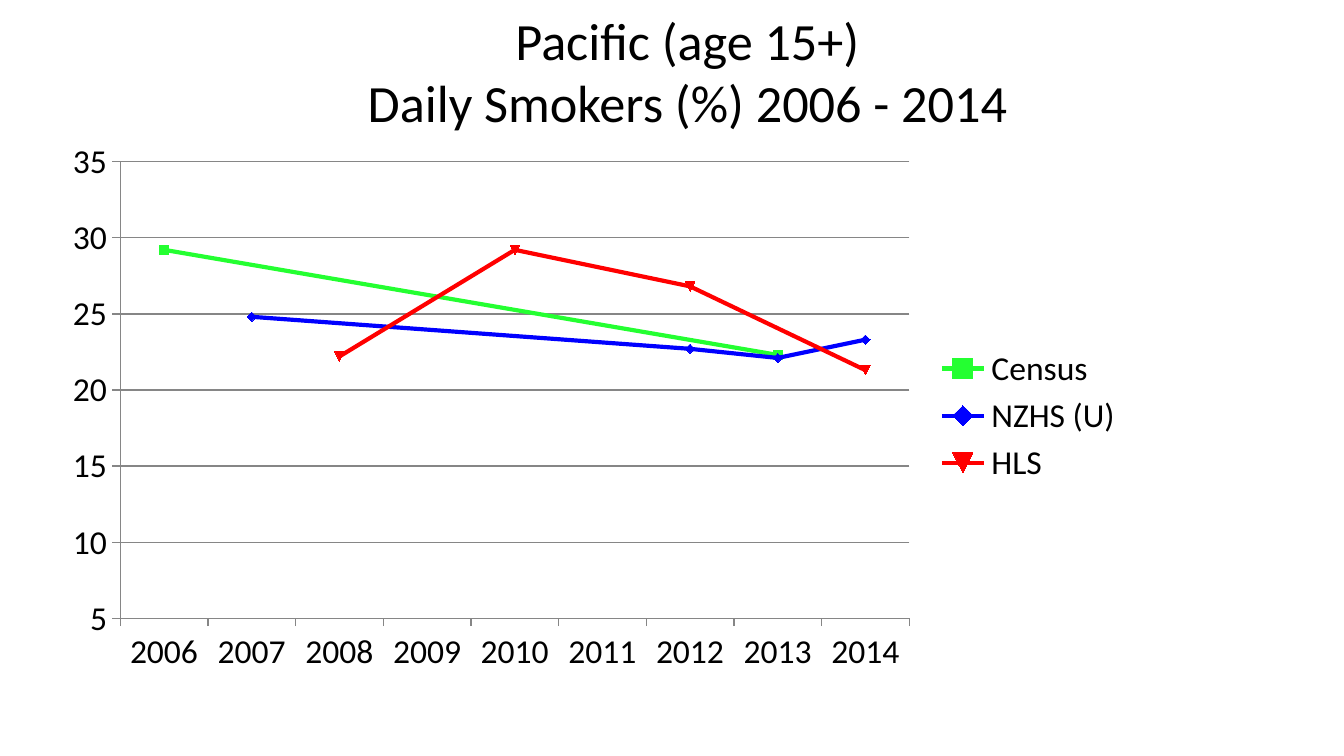
from lxml import etree
from pptx import Presentation
from pptx.chart.data import CategoryChartData
from pptx.dml.color import RGBColor
from pptx.enum.chart import XL_CHART_TYPE, XL_LEGEND_POSITION, XL_MARKER_STYLE, XL_TICK_MARK
from pptx.enum.text import MSO_ANCHOR, PP_ALIGN
from pptx.oxml.ns import qn
from pptx.util import Cm, Pt

LINE = XL_CHART_TYPE.LINE_MARKERS
RIGHT = XL_LEGEND_POSITION.RIGHT
AUTO = XL_MARKER_STYLE.AUTOMATIC
OUT = XL_TICK_MARK.OUTSIDE
MIDDLE = MSO_ANCHOR.MIDDLE
CENTER = PP_ALIGN.CENTER

FONT = "Calibri"
COLORS = {
    "text": "000000",
    "axis": "868686",
    "Census": "24FF31",
    "NZHS (U)": "0000FF",
    "HLS": "FF0000",
}
YEARS = range(2006, 2015)
RATES = {
    "Census": {2006: 29.2, 2013: 22.3},
    "NZHS (U)": {2007: 24.8, 2012: 22.7, 2013: 22.1, 2014: 23.3},
    "HLS": {2008: 22.2, 2010: 29.2, 2012: 26.8, 2014: 21.3},
}
PLOT = {"x": 0.058, "y": 0.03, "w": 0.731, "h": 0.845}


def color(name):
    return RGBColor.from_string(COLORS[name])


def set_font(font, size):
    font.name = FONT
    font.size = Pt(size)
    font.color.rgb = color("text")


def set_line(line, name, width):
    line.color.rgb = color(name)
    line.width = Pt(width)


def add_title(slide, text):
    title = slide.shapes.title
    title.left, title.top = Cm(1.09), Cm(0)
    title.width, title.height = Cm(23.8), Cm(2.67)
    frame = title.text_frame
    frame.text = text
    frame.vertical_anchor = MIDDLE
    for para in frame.paragraphs:
        para.alignment = CENTER
        for run in para.runs:
            set_font(run.font, 28)


def place_plot(chart):
    """Fix the inner plot area as fractions of the chart."""
    area = chart.plots[0]._element.getparent()
    for old in area.findall(qn("c:layout")):
        area.remove(old)
    layout = etree.Element(qn("c:layout"))
    area.insert(0, layout)
    manual = etree.SubElement(layout, qn("c:manualLayout"))
    parts = {"layoutTarget": "inner", "xMode": "edge", "yMode": "edge", **PLOT}
    for tag, val in parts.items():
        etree.SubElement(manual, qn("c:" + tag)).set("val", str(val))


def style_axes(chart):
    for axis in (chart.category_axis, chart.value_axis):
        axis.major_tick_mark = OUT
        set_line(axis.format.line, "axis", 0.75)
        set_font(axis.tick_labels.font, 18)
    axis = chart.value_axis
    axis.minimum_scale, axis.maximum_scale = 5, 35
    axis.major_unit = 5
    axis.has_major_gridlines = True
    set_line(axis.major_gridlines.format.line, "axis", 0.75)


def style_series(series):
    set_line(series.format.line, series.name, 2.25)
    series.smooth = False
    mark = series.marker
    mark.style, mark.size = AUTO, 5
    mark.format.fill.solid()
    mark.format.fill.fore_color.rgb = color(series.name)
    set_line(mark.format.line, series.name, 0.75)


def add_chart(slide):
    data = CategoryChartData()
    data.categories = [str(year) for year in YEARS]
    for name, rates in RATES.items():
        data.add_series(name, [rates.get(year) for year in YEARS])
    chart = slide.shapes.add_chart(
        LINE, Cm(1.09), Cm(2.67), Cm(20.4), Cm(10.29), data).chart
    chart.has_title = False
    set_font(chart.font, 18)
    chart.has_legend = True
    chart.legend.position = RIGHT
    chart.legend.include_in_layout = False
    set_font(chart.legend.font, 18)
    style_axes(chart)
    chart.plots[0].vary_by_categories = False
    for series in chart.plots[0].series:
        style_series(series)
    place_plot(chart)
    # Join the points across years without a survey
    for blank in chart._chartSpace.iter(qn("c:dispBlanksAs")):
        blank.set("val", "span")


def main():
    deck = Presentation()
    deck.slide_width, deck.slide_height = Cm(25.4), Cm(14.28)
    slide = deck.slides.add_slide(deck.slide_layouts[5])
    add_title(slide, "Pacific (age 15+)\vDaily Smokers (%) 2006 - 2014")
    add_chart(slide)
    deck.save("out.pptx")


if __name__ == "__main__":
    main()
